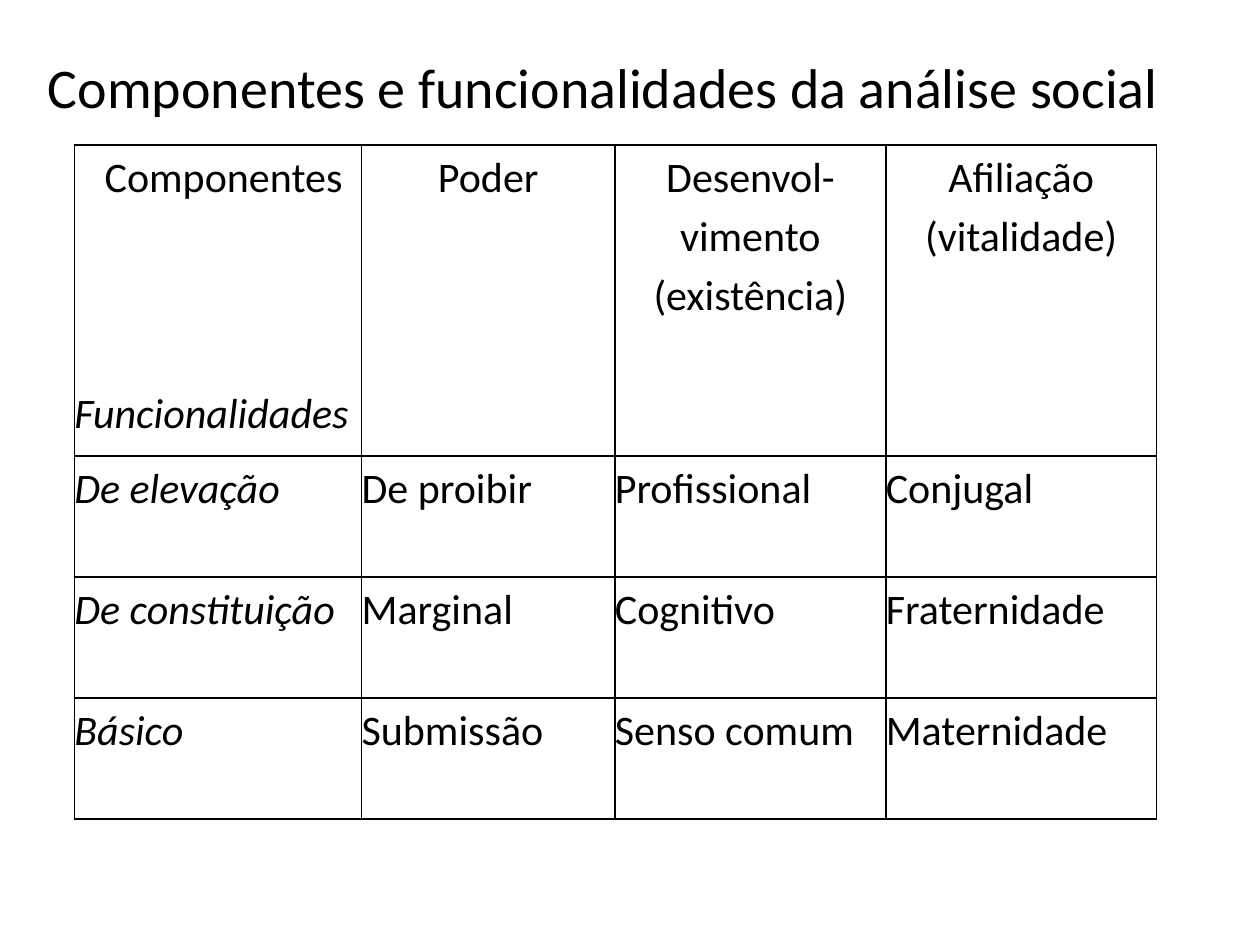
from lxml.etree import SubElement
from pptx import Presentation
from pptx.dml.color import RGBColor
from pptx.enum.text import MSO_ANCHOR, PP_ALIGN
from pptx.oxml.ns import qn
from pptx.util import Inches, Pt

TITLE = "Componentes e funcionalidades da análise social"
CORNER = ("Componentes", "Funcionalidades")
HEADERS = [["Poder"], ["Desenvol-vimento (existência)"], ["Afiliação", "(vitalidade)"]]
ROWS = [
    ("De elevação", "De proibir", "Profissional", "Conjugal"),
    ("De constituição", "Marginal", "Cognitivo", "Fraternidade"),
    ("Básico", "Submissão", "Senso comum", "Maternidade"),
]
COLUMN_WIDTHS = [2.28, 2.01, 2.15, 2.15]
ROW_HEIGHTS = [2.47] + [0.96] * len(ROWS)
THEME = {"font": "Calibri", "ink": "000000", "title": 32, "body": 24,
         "spacing": 1.15, "border": 1}


def write(para, text, size=THEME["body"], italic=False, align=PP_ALIGN.LEFT,
          spacing=THEME["spacing"], before=0, indent=0):
    properties = para._p.get_or_add_pPr()
    properties.set("marL", str(Inches(indent)))
    properties.set("indent", "0")
    para.alignment = align
    para.line_spacing = spacing
    para.space_before = Pt(before)
    span = para.add_run()
    span.text = text
    font = span.font
    font.name, font.size, font.italic = THEME["font"], Pt(size), italic
    font.color.rgb = RGBColor.from_string(THEME["ink"])


def style_cell(cell):
    """Clear margins and fill, and draw a thin line on all four sides."""
    cell.margin_left = cell.margin_right = cell.margin_top = cell.margin_bottom = 0
    properties = cell._tc.get_or_add_tcPr()
    for side in ("lnL", "lnR", "lnT", "lnB"):
        line = SubElement(properties, qn(f"a:{side}"), w=str(Pt(THEME["border"])))
        fill = SubElement(line, qn("a:solidFill"))
        SubElement(fill, qn("a:srgbClr"), val=THEME["ink"])
    cell.fill.background()


def add_title(page):
    box = page.shapes.title
    box.left, box.top, box.width, box.height = map(Inches, (0.28, 0.36, 9.21, 0.64))
    frame = box.text_frame
    frame.word_wrap = False
    frame.vertical_anchor = MSO_ANCHOR.MIDDLE
    write(frame.paragraphs[0], TITLE, size=THEME["title"], spacing=1.0)


def add_grid(page):
    frame = page.shapes.add_table(
        len(ROW_HEIGHTS), len(COLUMN_WIDTHS), Inches(0.59), Inches(1.15),
        Inches(sum(COLUMN_WIDTHS)), Inches(sum(ROW_HEIGHTS)))
    table = frame.table
    table.first_row = table.horz_banding = False
    for column, width in zip(table.columns, COLUMN_WIDTHS):
        column.width = Inches(width)
    for row, height in zip(table.rows, ROW_HEIGHTS):
        row.height = Inches(height)
    for cell in table.iter_cells():
        style_cell(cell)

    corner = table.cell(0, 0).text_frame
    write(corner.paragraphs[0], CORNER[0], indent=0.24)
    write(corner.add_paragraph(), CORNER[1], italic=True, before=101)
    for column, lines in enumerate(HEADERS, start=1):
        header = table.cell(0, column).text_frame
        for number, text in enumerate(lines):
            para = header.add_paragraph() if number else header.paragraphs[0]
            write(para, text, align=PP_ALIGN.CENTER)
    for row, texts in enumerate(ROWS, start=1):
        for column, text in enumerate(texts):
            para = table.cell(row, column).text_frame.paragraphs[0]
            write(para, text, italic=column == 0)


def main():
    deck = Presentation()
    deck.slide_width, deck.slide_height = Inches(10), Inches(7.5)
    page = deck.slides.add_slide(deck.slide_layouts.get_by_name("Title Only"))
    add_title(page)
    add_grid(page)
    deck.save("out.pptx")


if __name__ == "__main__":
    main()
